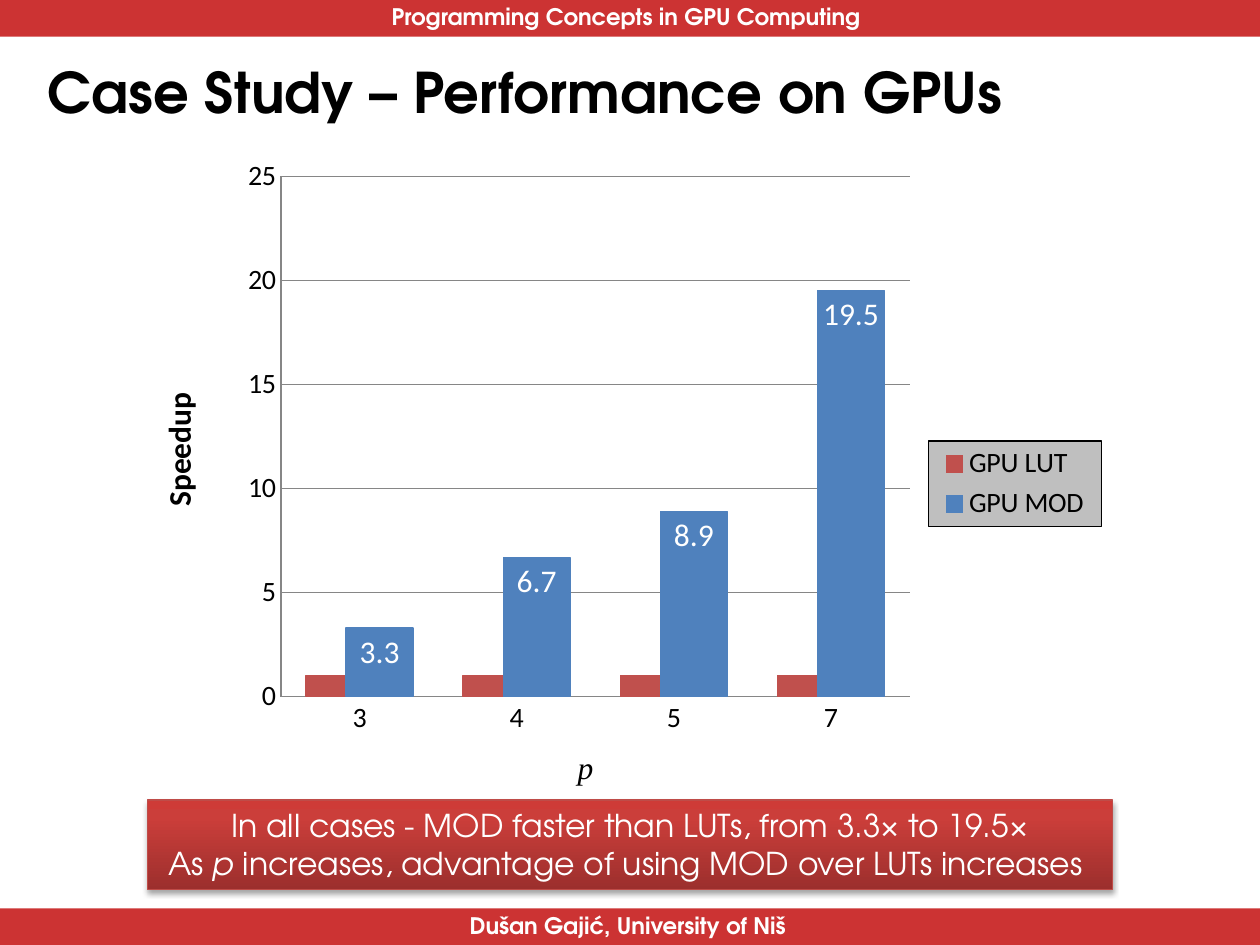
from dataclasses import dataclass

from pptx import Presentation
from pptx.chart.data import CategoryChartData
from pptx.dml.color import RGBColor
from pptx.enum.chart import XL_CHART_TYPE as ChartType
from pptx.enum.chart import XL_LABEL_POSITION as LabelPosition
from pptx.enum.chart import XL_LEGEND_POSITION as LegendPosition
from pptx.enum.chart import XL_TICK_MARK as TickMark
from pptx.enum.shapes import MSO_SHAPE as ShapeType
from pptx.enum.text import MSO_ANCHOR as Anchor
from pptx.enum.text import PP_ALIGN as Align
from pptx.oxml import parse_xml
from pptx.oxml.ns import nsdecls, qn
from pptx.util import Inches, Pt

COLORS = {
    "band": "CC3333",
    "white": "FFFFFF",
    "black": "000000",
    "grid": "868686",
    "legend": "BFBFBF",
    "lut": "C0504D",
    "mod": "4F81BD",
    "callout_line": "BF4C48",
    "callout_dark": "9C2F2D",
    "callout_mid": "CB3E3A",
    "callout_light": "CE3B37",
}
HEADING_FONT = "TeX Gyre Adventor"
CHART_FONT = "Calibri"
CHART_BOX = (1.18, 1.15, 7.64, 5.38)


@dataclass
class Band:
    text: str
    top: float
    text_left: float
    text_top: float
    text_width: float


@dataclass
class Series:
    name: str
    values: tuple
    color: str


BANDS = [
    Band("Dušan Gajić, University of Niš", 7.21, 3.63, 7.19, 2.74),
    Band("Programming Concepts in GPU Computing", 0, 3.01, -0.03, 3.97),
]
CATEGORIES = ["3", "4", "5", "7"]
SERIES = [
    Series("GPU LUT", (1, 1, 1, 1), "lut"),
    Series("GPU MOD", (3.3, 6.7, 8.9, 19.5), "mod"),
]


def rgb(name: str) -> RGBColor:
    return RGBColor.from_string(COLORS[name])


def style_font(font, size: float, color: str, name: str, bold: bool = False) -> None:
    font.size, font.name, font.bold = Pt(size), name, bold
    font.color.rgb = rgb(color)


def add_band(slide, band: Band) -> None:
    bar = slide.shapes.add_shape(
        ShapeType.RECTANGLE, 0, Inches(band.top), Inches(10), Inches(0.29))
    bar.shadow.inherit = False
    bar.fill.solid()
    bar.fill.fore_color.rgb = rgb("band")
    bar.line.fill.background()
    label = slide.shapes.add_textbox(
        Inches(band.text_left), Inches(band.text_top),
        Inches(band.text_width), Inches(0.32))
    label.text_frame.text = band.text
    label.text_frame.word_wrap = False
    style_font(label.text_frame.paragraphs[0].runs[0].font,
               13, "white", HEADING_FONT, True)


def place(element, index: int, left: float, top: float,
          width: float = 0, height: float = 0) -> None:
    """Give a chart part a fixed place, in slide inches."""
    for old in element.findall(qn("c:layout")):
        element.remove(old)
    chart_left, chart_top, chart_width, chart_height = CHART_BOX
    settings = [("xMode", "edge"), ("yMode", "edge"),
                ("x", round((left - chart_left) / chart_width, 4)),
                ("y", round((top - chart_top) / chart_height, 4))]
    if width:
        settings += [("w", round(width / chart_width, 4)),
                     ("h", round(height / chart_height, 4))]
        if element.tag == qn("c:plotArea"):
            settings.insert(0, ("layoutTarget", "inner"))
    body = "".join(f'<c:{tag} val="{value}"/>' for tag, value in settings)
    element.insert(index, parse_xml(
        f'<c:layout {nsdecls("c")}><c:manualLayout>{body}</c:manualLayout></c:layout>'))


def style_axis(axis, title: str, title_font: str, left: float, top: float) -> None:
    axis.major_tick_mark = axis.minor_tick_mark = TickMark.NONE
    axis.format.line.color.rgb = rgb("grid")
    style_font(axis.tick_labels.font, 16, "black", CHART_FONT)
    text_frame = axis.axis_title.text_frame
    text_frame.text = title
    style_font(text_frame.paragraphs[0].runs[0].font, 18, "black", title_font)
    place(axis.axis_title._element, 1, left, top)


def add_speedup_chart(slide) -> None:
    data = CategoryChartData()
    data.categories = CATEGORIES
    for series in SERIES:
        data.add_series(series.name, series.values)
    chart = slide.shapes.add_chart(
        ChartType.COLUMN_CLUSTERED, *map(Inches, CHART_BOX), data).chart
    chart.has_title = False
    style_font(chart.font, 10, "black", CHART_FONT)
    place(chart._chartSpace.chart.plotArea, 0, 2.23, 1.4, 4.99, 4.13)

    # Axes
    style_axis(chart.category_axis, "p", "Times New Roman", 4.54, 5.89)
    style_axis(chart.value_axis, "Speedup", CHART_FONT, 1.2, 3.07)
    chart.category_axis.axis_title.text_frame.paragraphs[0].runs[0].font.italic = True
    chart.value_axis.axis_title.text_frame.paragraphs[0].runs[0].font.bold = True
    chart.value_axis.minimum_scale, chart.value_axis.maximum_scale = 0, 25
    chart.value_axis.major_unit = 5
    chart.value_axis.major_gridlines.format.line.color.rgb = rgb("grid")

    # Columns
    plot = chart.plots[0]
    plot.gap_width, plot.overlap = 75, 40
    plot.vary_by_categories = False
    for column, series in zip(plot.series, SERIES):
        column.format.fill.solid()
        column.format.fill.fore_color.rgb = rgb(series.color)
        column.format.line.color.rgb = rgb(series.color)
        column.format.line.width = Pt(0.75)
    labels = plot.series[1].data_labels
    labels.show_value = True
    labels.position = LabelPosition.INSIDE_END
    style_font(labels.font, 18, "white", CHART_FONT)

    # Legend
    chart.has_legend = True
    legend = chart.legend
    legend.position = LegendPosition.RIGHT
    legend.include_in_layout = False
    style_font(legend.font, 16, "black", CHART_FONT)
    place(legend._element, 1, 7.37, 3.5, 1.37, 0.68)
    legend._element.find(qn("c:overlay")).addnext(parse_xml(
        f'<c:spPr {nsdecls("c", "a")}>'
        f'<a:solidFill><a:srgbClr val="{COLORS["legend"]}"/></a:solidFill>'
        f'<a:ln w="9525"><a:solidFill><a:srgbClr val="{COLORS["black"]}"/>'
        '</a:solidFill></a:ln></c:spPr>'))


def add_callout(slide) -> None:
    box = slide.shapes.add_shape(
        ShapeType.RECTANGLE, Inches(1.17), Inches(6.35), Inches(7.66), Inches(0.71))
    box.line.color.rgb = rgb("callout_line")
    box.line.width = Pt(0.75)
    stops = [(0, "callout_dark"), (80, "callout_mid"), (100, "callout_light")]
    stop_xml = "".join(
        f'<a:gs pos="{position * 1000}"><a:srgbClr val="{COLORS[color]}"/></a:gs>'
        for position, color in stops)
    properties = box._element.spPr
    properties.find(qn("a:prstGeom")).addnext(parse_xml(
        f'<a:gradFill {nsdecls("a")} rotWithShape="1"><a:gsLst>{stop_xml}</a:gsLst>'
        '<a:lin ang="16200000" scaled="0"/></a:gradFill>'))
    properties.append(parse_xml(
        f'<a:effectLst {nsdecls("a")}><a:outerShdw blurRad="{Pt(3.1)}" '
        f'dist="{Pt(1.8)}" dir="5400000" rotWithShape="0">'
        f'<a:srgbClr val="{COLORS["black"]}"><a:alpha val="35000"/></a:srgbClr>'
        '</a:outerShdw></a:effectLst>'))

    text_frame = box.text_frame
    text_frame.word_wrap = False
    text_frame.vertical_anchor = Anchor.TOP
    text_frame.text = "In all cases - MOD faster than LUTs, from 3.3× to 19.5×"
    second = text_frame.add_paragraph()
    for text in ("As ", "p", " increases, advantage of using MOD over LUTs increases "):
        second.add_run().text = text
    for paragraph in text_frame.paragraphs:
        paragraph.alignment = Align.CENTER
        for run in paragraph.runs:
            style_font(run.font, 18, "white", HEADING_FONT)
    second.runs[1].font.italic = True


def add_title(slide) -> None:
    title = slide.shapes.title
    title.left, title.top = Inches(0.28), Inches(0.4)
    title.width, title.height = Inches(7.91), Inches(0.64)
    text_frame = title.text_frame
    text_frame.text = "Case Study – Performance on GPUs"
    text_frame.word_wrap = False
    text_frame.vertical_anchor = Anchor.MIDDLE
    text_frame.paragraphs[0].alignment = Align.LEFT
    style_font(text_frame.paragraphs[0].runs[0].font, 32, "black", HEADING_FONT, True)


def main() -> None:
    presentation = Presentation()
    presentation.slide_width, presentation.slide_height = Inches(10), Inches(7.5)
    slide = presentation.slides.add_slide(presentation.slide_layouts[5])
    for band in BANDS:
        add_band(slide, band)
    add_speedup_chart(slide)
    add_callout(slide)
    add_title(slide)
    presentation.save("out.pptx")


if __name__ == "__main__":
    main()
